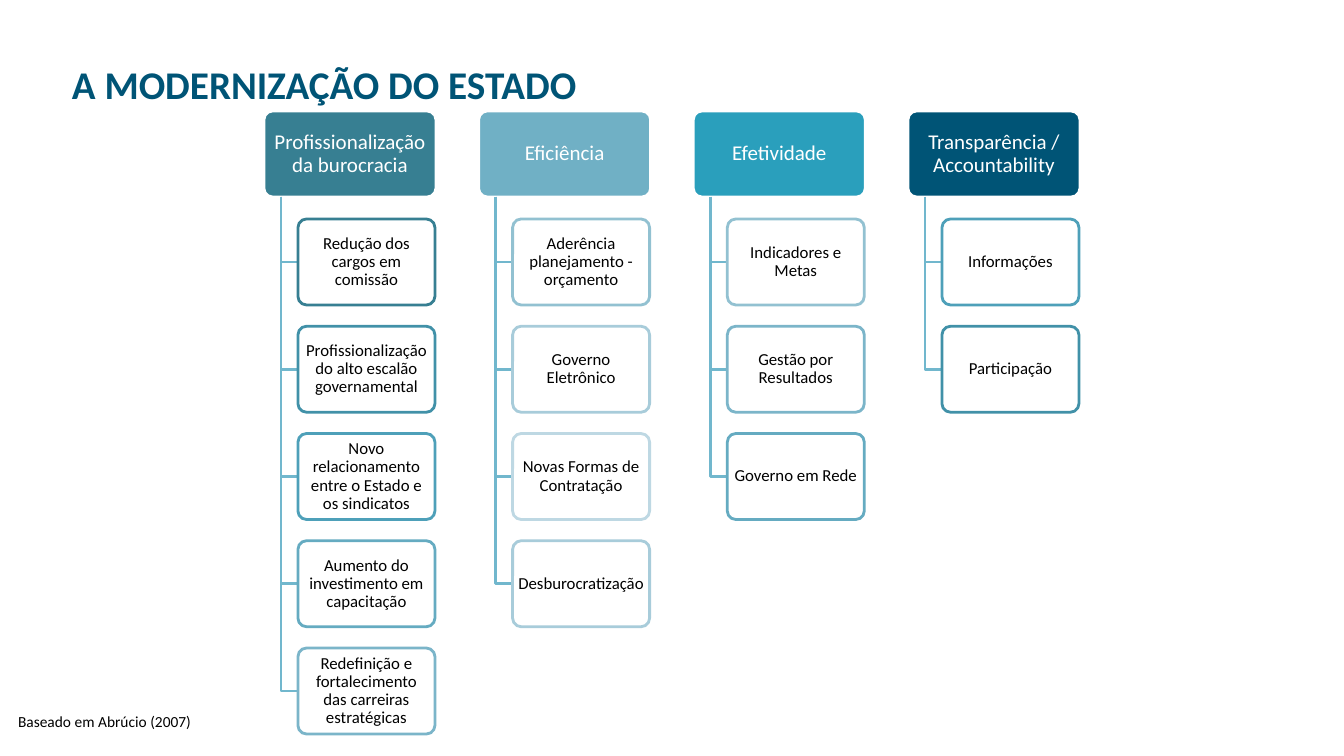
"""Build the slide on modernising the State: four themes with their measures."""
from lxml import etree
from pptx import Presentation, util as u
from pptx.dml.color import RGBColor
from pptx.enum import shapes, text
from pptx.oxml.ns import qn

TITLE = "A MODERNIZAÇÃO DO ESTADO"
SOURCE = "Baseado em Abrúcio (2007)"
COLORS = {
    "white": "FFFFFF", "black": "000000", "navy": "005476", "branch": "71B7CD",
    "teal": "377F92", "sky": "70B0C5", "cyan": "2A9FBC",
    "tone1": "4191A8", "tone2": "4EA0B9", "tone3": "65ABC1", "tone4": "7BB5C9",
    "tone5": "92C1D1", "tone6": "A8CCDA", "tone7": "BED8E3",
}
THEMES = [
    ("Profissionalização da burocracia", "teal", [
        ("Redução dos cargos em comissão", "teal"),
        ("Profissionalização do alto escalão governamental", "tone1"),
        ("Novo relacionamento entre o Estado e os sindicatos", "tone2"),
        ("Aumento do investimento em capacitação", "tone3"),
        ("Redefinição e fortalecimento das carreiras estratégicas", "tone4")]),
    ("Eficiência", "sky", [
        ("Aderência planejamento - orçamento", "tone5"),
        ("Governo Eletrônico", "tone6"),
        ("Novas Formas de Contratação", "tone7"),
        ("Desburocratização", "tone6")]),
    ("Efetividade", "cyan", [
        ("Indicadores e Metas", "tone5"),
        ("Gestão por Resultados", "tone4"),
        ("Governo em Rede", "tone3")]),
    ("Transparência / Accountability", "navy", [
        ("Informações", "tone2"),
        ("Participação", "tone1")]),
]

SLIDE_W, SLIDE_H = 1344, 756
TITLE_BOX = (62, 58, 952, 58)
SOURCE_BOX = (13, 707, 211, 29)
LEFT, HEAD_TOP, HEAD_W, BOX_H = 264, 111, 172, 86
COLUMN_SPAN, ROW_SPAN = 644, 429
ITEM_TOP, ITEM_INDENT, ITEM_W, TRUNK_INDENT = 219, 34, 137, 17
SCALE = 914400 / 100.8


def px(n):
    return u.Emu(round(n * SCALE))


def rgb(name):
    return RGBColor.from_string(COLORS[name])


def write(tf, words, size, color, inset, bold=False, align=text.PP_ALIGN.LEFT,
          anchor=text.MSO_ANCHOR.MIDDLE, spacing=0.9):
    side, end = map(px, inset)
    frame = {"word_wrap": True, "vertical_anchor": anchor, "margin_left": side,
             "margin_right": side, "margin_top": end, "margin_bottom": end}
    for key, value in frame.items():
        setattr(tf, key, value)
    p = tf.paragraphs[0]
    p.alignment, p.line_spacing = align, spacing
    r = p.add_run()
    r.text = words
    for key, value in {"name": "Calibri", "size": u.Pt(size), "bold": bold}.items():
        setattr(r.font, key, value)
    r.font.color.rgb = rgb(color)


def outline(sp, color):
    sp.shadow.inherit = False
    sp.line.color.rgb = rgb(color)
    sp.line.width = u.Pt(2)


def add_box(s, box, words, size, color, fill, line):
    sp = s.shapes.add_shape(shapes.MSO_SHAPE.ROUNDED_RECTANGLE, *map(px, box))
    sp.adjustments[0] = 0.1
    sp.fill.solid()
    sp.fill.fore_color.rgb = rgb(fill)
    outline(sp, line)
    write(sp.text_frame, words, size, color, (3, 2), align=text.PP_ALIGN.CENTER)
    return sp


def add_branch(s, x, top, bottom, right):
    path = s.shapes.build_freeform(px(x), px(top))
    path.add_line_segments([(px(x), px(bottom)), (px(right), px(bottom))], close=False)
    sp = path.convert_to_shape()
    sp.fill.background()
    outline(sp, "branch")


def add_theme(s, column, heading, color, items):
    x = LEFT + column * COLUMN_SPAN / (len(THEMES) - 1)
    add_box(s, (x, HEAD_TOP, HEAD_W, BOX_H), heading, 15, "white", color, "white")
    row_steps = max(len(theme[2]) for theme in THEMES) - 1
    for row, (words, tone) in enumerate(items):
        y = ITEM_TOP + row * ROW_SPAN / row_steps
        item_x = x + ITEM_INDENT
        add_branch(s, x + TRUNK_INDENT, HEAD_TOP + BOX_H, y + BOX_H / 2, item_x)
        sp = add_box(s, (item_x, y, ITEM_W, BOX_H), words, 12, "black", "white", tone)
        fill = sp._element.spPr.find(qn("a:solidFill"))
        etree.SubElement(fill[0], qn("a:alpha"), val="90000")


def main():
    prs = Presentation()
    prs.slide_width, prs.slide_height = px(SLIDE_W), px(SLIDE_H)
    s = prs.slides.add_slide(prs.slide_layouts[5])
    title = s.shapes.title
    title.left, title.top, title.width, title.height = map(px, TITLE_BOX)
    write(title.text_frame, TITLE, 28, "navy", (10, 5), bold=True)
    for column, theme in enumerate(THEMES):
        add_theme(s, column, *theme)
    tf = s.shapes.add_textbox(*map(px, SOURCE_BOX)).text_frame
    write(tf, SOURCE, 11, "black", (5, 5), anchor=text.MSO_ANCHOR.TOP, spacing=1.0)
    tf.auto_size = text.MSO_AUTO_SIZE.SHAPE_TO_FIT_TEXT
    prs.save("out.pptx")


if __name__ == "__main__":
    main()
